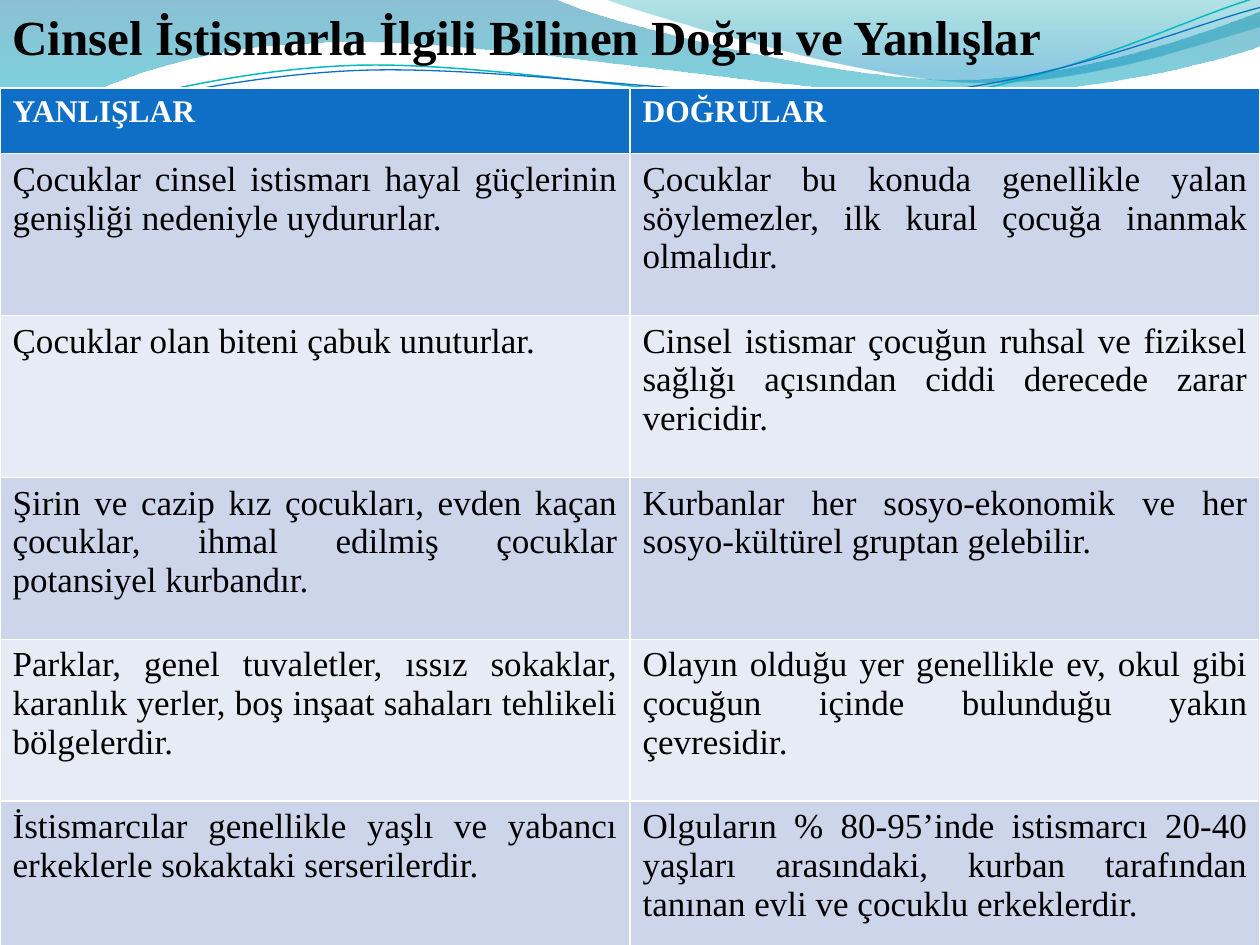
import math

import pptx
import pptx.dml.color
import pptx.enum.text
import pptx.oxml
import pptx.oxml.ns
import pptx.util

Inches, Pt = pptx.util.Inches, pptx.util.Pt
RGB = pptx.dml.color.RGBColor.from_string
ALIGN = pptx.enum.text.PP_ALIGN
qn, nsdecls = pptx.oxml.ns.qn, pptx.oxml.ns.nsdecls

THEME = {
    "font": "Times New Roman",
    "ink": "000000", "paper": "FFFFFF", "header": "0F6FC6",
    "bands": ["CCD5EA", "E7EBF5"],
    "title_size": 28, "header_size": 18, "body_size": 20,
}

presentation = pptx.Presentation()
presentation.slide_width, presentation.slide_height = Inches(10), Inches(7.5)
slide = presentation.slides.add_slide(presentation.slide_layouts[1])
master_tree = presentation.slide_master.shapes._spTree


def add_curve(start, segments, closed, order):
    """Master outline from points (x, y) and cubics (x1, y1, x2, y2, x, y), in inches."""
    points = [start] + [segment[i:i + 2] for segment in segments
                        for i in range(0, len(segment), 2)]
    scaled = [(Inches(x), Inches(y)) for x, y in points]
    builder = slide.shapes.build_freeform(*scaled[0], scale=1.0)
    builder.add_line_segments(scaled[1:], close=closed)
    shape = builder.convert_to_shape()
    shape.shadow.inherit = False
    # Each run of three points becomes one cubic curve
    lines = shape._element.iter(qn("a:lnTo"))
    lines = iter(list(lines))
    for segment in segments:
        line = next(lines)
        if len(segment) == 6:
            line.tag = qn("a:cubicBezTo")
            for _ in range(2):
                extra = next(lines)
                line.append(extra[0])
                extra.getparent().remove(extra)
    # Move behind the placeholders of the slide master
    shape._element.nvSpPr.cNvPr.set("id", str(100 + order))
    master_tree.insert(2 + order, shape._element)
    return shape


def write_text(frame, text, size, color, bold, alignment):
    paragraph = frame.paragraphs[0]
    paragraph.alignment = alignment
    run = paragraph.add_run()
    run.text = text
    for name, value in {"name": THEME["font"], "size": Pt(size), "bold": bold}.items():
        setattr(run.font, name, value)
    run.font.color.rgb = RGB(color)
    return paragraph


# Translucent waves: start, segments, gradient stops (position, colour, opacity %)
waves = [
    ((0, 0), [(4.4, -0.01), (4.76, 0.17, 6.64, 0.63, 7.58, 0.63),
              (8.53, 0.63, 9.58, 0.26, 10, 0.09), (10.01, 0.36),
              (9.83, 0.44, 8.7, 0.76, 7.46, 0.75), (6.22, 0.75, 3.82, 0.28, 2.57, 0.34),
              (1.29, 0.36, 0.46, 0.83, -0.01, 1.13), (0, 0)],
     [(0, "0074A1", 45), (1, "00C6CF", 55)]),
    ((4.79, -0.01), [(5.09, 0.11, 6.82, 0.62, 7.69, 0.65),
                     (8.56, 0.69, 9.61, 0.32, 10, 0.21), (10, 0), (4.79, -0.01)],
     [(0, "00A1A9", 30), (0.8, "008BBF", 45)]),
]
for order, (start, segments, stops) in enumerate(waves):
    wave = add_curve(start, segments, True, order)
    wave.line.fill.background()
    wave.fill.gradient()
    wave.fill.gradient_angle = 270
    for gradient_stop, (position, color, _) in zip(wave.fill.gradient_stops, stops):
        gradient_stop.position = position
        gradient_stop.color.rgb = RGB(color)
    for element, (_, _, opacity) in zip(wave._element.spPr.iter(qn("a:srgbClr")), stops):
        element.append(pptx.oxml.parse_xml(
            f'<a:alpha {nsdecls("a")} val="{opacity * 1000}"/>'))

# Thin wave lines, drawn level and then tilted: centre, start, segments, colour, width
TILT = 2.7
cosine, sine = math.cos(math.radians(TILT)), math.sin(math.radians(TILT))
strands = [
    ((4.99, 0.575), (0, 1.11),
     [(0.48, 0.93, 1.58, 0.57, 2.77, 0.52), (3.95, 0.47, 5.93, 0.89, 7.13, 0.8),
      (8.33, 0.71, 9.38, 0.15, 9.98, -0.02)], "0AB8BF", 0.85),
    ((5, 0.59), (0, 1.04),
     [(0.47, 0.96, 1.64, 0.61, 2.83, 0.56), (4.03, 0.51, 5.97, 0.84, 7.17, 0.75),
      (8.36, 0.67, 9.41, 0.21, 10, 0.06)], "0F6FC6", 0.75),
]
for order, ((center_x, center_y), start, segments, color, width) in enumerate(strands, 2):
    level = []
    for segment in [start] + segments:
        turned = []
        for x, y in zip(segment[::2], segment[1::2]):
            dx, dy = x - center_x, y - center_y
            turned += [center_x + dx * cosine - dy * sine, center_y + dx * sine + dy * cosine]
        level.append(tuple(turned))
    strand = add_curve(level[0], level[1:], False, order)
    strand.rotation = 360 - TILT
    strand.fill.background()
    strand.line.color.rgb = RGB(color)
    strand.line.width = Pt(width)

# Heading in the body placeholder; the title placeholder is not needed
slide.shapes.title._element.getparent().remove(slide.shapes.title._element)
heading = slide.placeholders[1]
for name, value in {"left": 0, "top": 0, "width": Inches(10), "height": Inches(7.5)}.items():
    setattr(heading, name, value)
paragraph = write_text(heading.text_frame, "Cinsel İstismarla İlgili Bilinen Doğru ve Yanlışlar",
                       THEME["title_size"], THEME["ink"], True, ALIGN.LEFT)
properties = paragraph._p.get_or_add_pPr()
properties.set("marL", str(Inches(0.3)))
properties.set("indent", str(Inches(-0.3)))
properties.append(pptx.oxml.parse_xml(f'<a:buNone {nsdecls("a")}/>'))

# Table of myths and facts; its style draws the white borders
rows = [
    ("YANLIŞLAR", "DOĞRULAR"),
    ("Çocuklar cinsel istismarı hayal güçlerinin genişliği nedeniyle uydururlar.",
     "Çocuklar bu konuda genellikle yalan söylemezler, ilk kural çocuğa inanmak olmalıdır."),
    ("Çocuklar olan biteni çabuk unuturlar.",
     "Cinsel istismar çocuğun ruhsal ve fiziksel sağlığı açısından ciddi derecede zarar "
     "vericidir."),
    ("Şirin ve cazip kız çocukları, evden kaçan çocuklar, ihmal edilmiş çocuklar potansiyel "
     "kurbandır.",
     "Kurbanlar her sosyo-ekonomik ve her sosyo-kültürel gruptan gelebilir."),
    ("Parklar, genel tuvaletler, ıssız sokaklar, karanlık yerler, boş inşaat sahaları "
     "tehlikeli bölgelerdir.",
     "Olayın olduğu yer genellikle ev, okul gibi çocuğun içinde bulunduğu yakın çevresidir."),
    ("İstismarcılar genellikle yaşlı ve yabancı erkeklerle sokaktaki serserilerdir.",
     "Olguların % 80-95’inde istismarcı 20-40 yaşları arasındaki, kurban tarafından tanınan "
     "evli ve çocuklu erkeklerdir."),
]
table_height, header_height, last_height = 7.09, 0.52, 1.43
middle_height = (table_height - header_height - last_height) / 4
row_heights = [header_height] + [middle_height] * 4 + [last_height]
table = slide.shapes.add_table(len(rows), 2, 0, Inches(0.7), Inches(10),
                               Inches(table_height)).table
for row_index, (texts, height) in enumerate(zip(rows, row_heights)):
    table.rows[row_index].height = Inches(height)
    if row_index == 0:
        fill = THEME["header"]
        text_format = THEME["header_size"], THEME["paper"], True, ALIGN.LEFT
    else:
        fill = THEME["bands"][(row_index - 1) % 2]
        text_format = THEME["body_size"], THEME["ink"], False, ALIGN.JUSTIFY
    for cell, text in zip(table.rows[row_index].cells, texts):
        cell.fill.solid()
        cell.fill.fore_color.rgb = RGB(fill)
        write_text(cell.text_frame, text, *text_format)

presentation.save("out.pptx")
